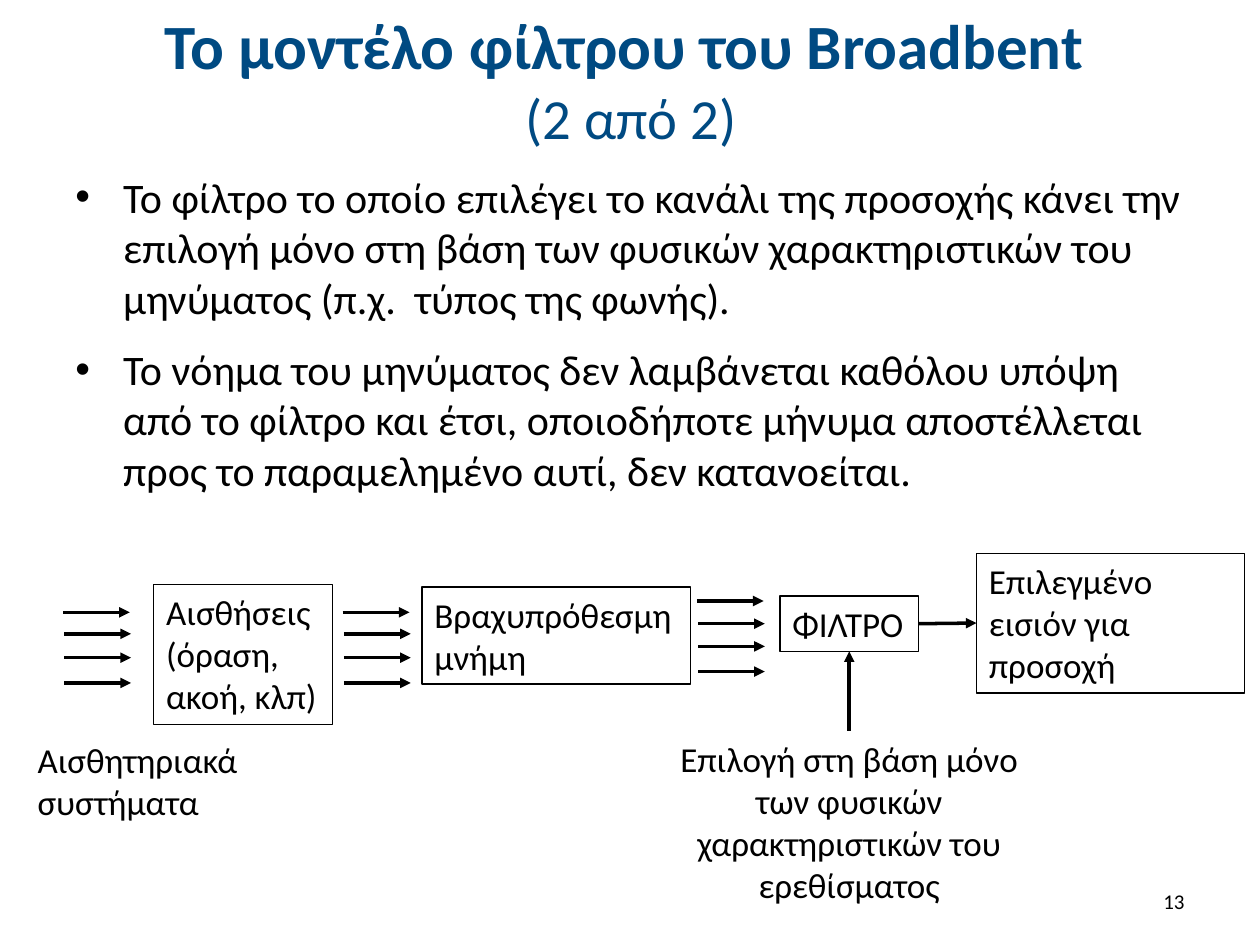
"""Build the slide on the filter model of attention."""
from lxml import etree
from pptx import Presentation
from pptx.dml.color import RGBColor
from pptx.enum.shapes import MSO_CONNECTOR, MSO_SHAPE
from pptx.enum.text import MSO_ANCHOR, MSO_AUTO_SIZE, PP_ALIGN
from pptx.oxml.ns import qn
from pptx.util import Inches, Pt

LEFT, CENTER, RIGHT = PP_ALIGN.LEFT, PP_ALIGN.CENTER, PP_ALIGN.RIGHT
TOP, MIDDLE = MSO_ANCHOR.TOP, MSO_ANCHOR.MIDDLE
NONE, GROW = MSO_AUTO_SIZE.NONE, MSO_AUTO_SIZE.SHAPE_TO_FIT_TEXT
RECT, LINE = MSO_SHAPE.RECTANGLE, MSO_CONNECTOR.STRAIGHT
COLORS = {name: RGBColor.from_string(code) for name, code in
          {"title": "004A82", "ink": "000000"}.items()}
FONT = "Calibri"

deck = Presentation()
deck.slide_width, deck.slide_height = Inches(10), Inches(7.5)
COL, ROW = deck.slide_width // 100, deck.slide_height // 75
slide = deck.slides.add_slide(deck.slide_layouts[6])
shapes = slide.shapes


def write(shape, paras, size, align=LEFT, anchor=TOP, fit=NONE, color="ink"):
    frame = shape.text_frame
    frame.word_wrap, frame.auto_size = True, fit
    frame.vertical_anchor = anchor
    for i, text in enumerate(paras):
        para = frame.add_paragraph() if i else frame.paragraphs[0]
        para.alignment = align
        run = para.add_run()
        run.text = text
        run.font.name, run.font.size = FONT, Pt(size)
        run.font.color.rgb = COLORS[color]
    return frame


def arrow(x1, y1, x2, y2):
    line = shapes.add_connector(LINE, *(int(n) for n in (x1 * COL, y1 * ROW, x2 * COL, y2 * ROW)))
    line.line.color.rgb, line.line.width = COLORS["ink"], Pt(2)
    etree.SubElement(line.line._get_or_add_ln(), qn("a:tailEnd"), type="triangle")
    etree.SubElement(line._element.spPr, qn("a:effectLst"))
    return line


title = shapes.add_textbox(int(5.1 * COL), int(1.3 * ROW), 90 * COL, int(9.9 * ROW))
head = write(title, ["Το μοντέλο φίλτρου του Broadbent "], 36, CENTER, MIDDLE,
             color="title").paragraphs[0]
head.runs[0].font.bold = True
head.add_line_break()
part = head.add_run()
part.text = "(2 από 2)"
part.font.name, part.font.size, part.font.bold = FONT, Pt(32.4), False
part.font.color.rgb = COLORS["title"]

POINTS = [
    "Το φίλτρο το οποίο επιλέγει το κανάλι της προσοχής κάνει την επιλογή μόνο "
    "στη βάση των φυσικών χαρακτηριστικών του μηνύματος (π.χ.  τύπος της φωνής).",
    "Το νόημα του μηνύματος δεν λαμβάνεται καθόλου υπόψη από το φίλτρο και έτσι, "
    "οποιοδήποτε μήνυμα αποστέλλεται προς το παραμελημένο αυτί, δεν κατανοείται.",
]
body = shapes.add_textbox(5 * COL, int(13.1 * ROW), 90 * COL, int(29.9 * ROW))
indent = Inches(0.38)
for para in write(body, POINTS, 24).paragraphs:
    para.space_before = Pt(12)
    props = para._p.get_or_add_pPr()
    props.set("marL", str(indent))
    props.set("indent", str(-indent))
    etree.SubElement(props, qn("a:buFont"), typeface="Arial")
    etree.SubElement(props, qn("a:buChar"), char="•")

number = shapes.add_textbox(int(71.7 * COL), int(69.5 * ROW), int(23.3 * COL), 4 * ROW)
write(number, ["13"], 12, RIGHT, MIDDLE)

BOXES = [
    ("senses", 12.2, 46.4, 14.2, 11.1, "Αισθήσεις (όραση, ακοή, κλπ)"),
    ("memory", 33.5, 46.6, 21.3, 7.7, "Βραχυπρόθεσμη μνήμη"),
    ("filter", 61.9, 47.3, 11, 4.4, "ΦΙΛΤΡΟ"),
    ("choice", 77.5, 43.9, 21.3, 11.1, "Επιλεγμένο εισιόν για προσοχή"),
]
nodes = {}
for name, x, y, w, h, text in BOXES:
    box = shapes.add_shape(RECT, int(x * COL), int(y * ROW), int(w * COL), int(h * ROW))
    box.shadow.inherit = False
    box.fill.background()
    box.line.color.rgb, box.line.width = COLORS["ink"], Pt(0.75)
    write(box, [text], 20, fit=GROW)
    nodes[name] = box

NOTES = [
    ("systems", 2, 58.1, 22.8, 7.7, LEFT, "Αισθητηριακά συστήματα"),
    ("basis", 51.2, 58, 32.4, 14.5, CENTER,
     "Επιλογή στη βάση μόνο των φυσικών χαρακτηριστικών του ερεθίσματος"),
]
for name, x, y, w, h, align, text in NOTES:
    note = shapes.add_textbox(int(x * COL), int(y * ROW), int(w * COL), int(h * ROW))
    write(note, [text], 20, align, fit=GROW)
    nodes[name] = note

INPUT = (48.6, 50.3, 52.2, 54.2)
OUTPUT = (47.7, 49.5, 51.3, 53.3)
for x, rows in ((5, INPUT), (27.2, INPUT), (55.3, OUTPUT)):
    for i, y in enumerate(rows):
        start = x + 0.1 * min(i, 1)
        arrow(start, y, start + 5.3, y)

for source, out, target, into in (("filter", 3, "choice", 1), ("basis", 0, "filter", 2)):
    link = arrow(0, 0, 1, 1)
    link.begin_connect(nodes[source], out)
    link.end_connect(nodes[target], into)

deck.save("out.pptx")
